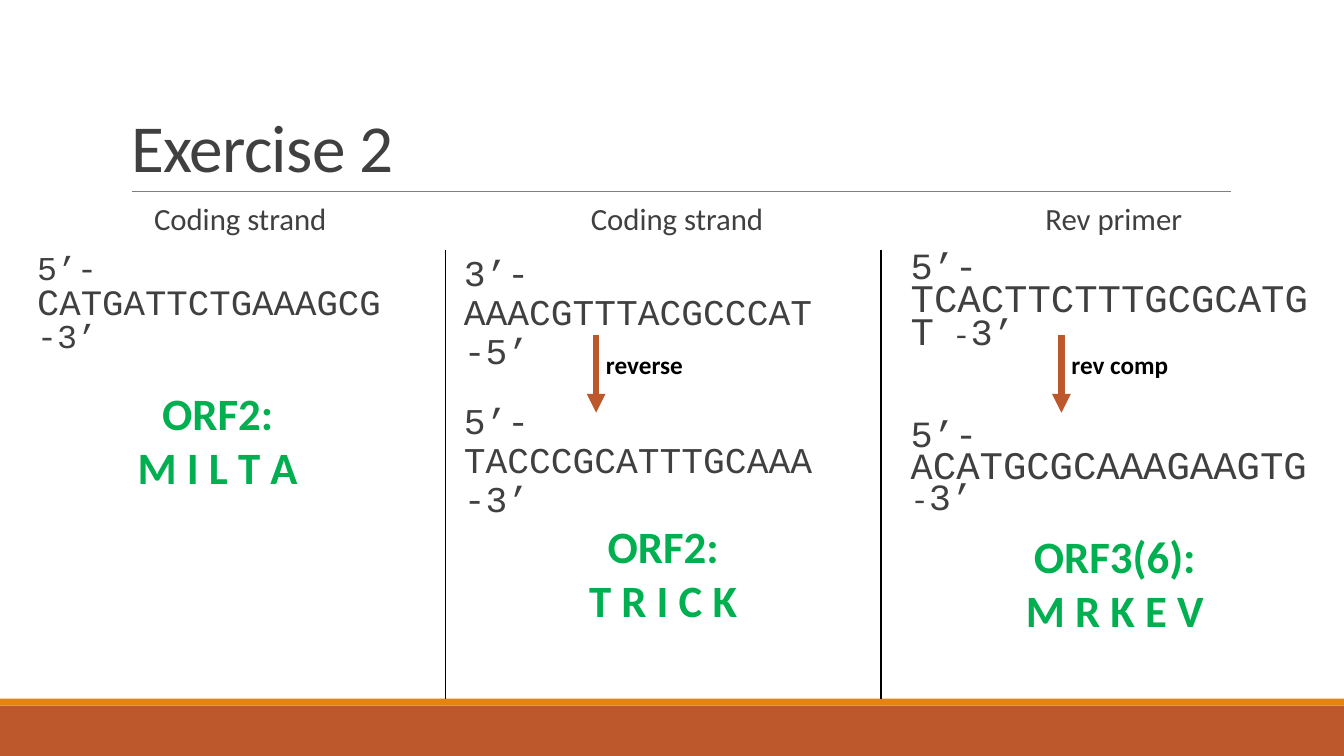
from pptx import Presentation
from pptx.dml.color import RGBColor
from pptx.enum import shapes, text
from pptx.oxml import parse_xml
from pptx.oxml.ns import nsdecls
from pptx.util import Pt

RUST = RGBColor(0xBD, 0x58, 0x2C)
ORANGE = RGBColor(0xE4, 0x83, 0x12)
GREY = RGBColor(0x80, 0x80, 0x80)
DARK = RGBColor(0x40, 0x40, 0x40)
BLACK = RGBColor(0, 0, 0)
GREEN = RGBColor(0, 0xB0, 0x50)
LEFT, PITCH, COL_W = 12.24, 312, 311.5


def add_line(x1, y1, x2, y2, color, width, arrow=False):
    c = s.shapes.add_connector(shapes.MSO_CONNECTOR.STRAIGHT, Pt(x1), Pt(y1), Pt(x2), Pt(y2))
    c.line.color.rgb = color
    c.line.width = Pt(width)
    if arrow:
        c.line._get_or_add_ln().append(parse_xml(f'<a:tailEnd {nsdecls("a")} type="triangle"/>'))
    c._element.spPr.append(parse_xml(f'<a:effectLst {nsdecls("a")}/>'))


def add_text(x, y, w, h, paragraphs, font, color, bold=False, align=text.PP_ALIGN.LEFT,
             spacing=1.0, indent=0, wrap=True):
    tf = s.shapes.add_textbox(Pt(x), Pt(y), Pt(w), Pt(h)).text_frame
    tf.word_wrap = wrap
    for i, runs in enumerate(paragraphs):
        p = tf.add_paragraph() if i else tf.paragraphs[0]
        p.alignment = align
        p.line_spacing = spacing
        if indent:
            p._p.get_or_add_pPr().set("marL", str(Pt(indent)))
        for words, size in runs:
            for j, part in enumerate(words.split("\v")):
                if j:
                    p.add_line_break()
                r = p.add_run()
                r.text = part
                r.font.name = font
                r.font.size = Pt(size)
                r.font.bold = bold
                r.font.color.rgb = color
    return tf


prs = Presentation()
prs.slide_width, prs.slide_height = Pt(960), Pt(540)
s = prs.slides.add_slide(prs.slide_layouts[5])

for top, height, color in [(504, 36, RUST), (499, 5, ORANGE)]:
    sp = s.shapes.add_shape(shapes.MSO_SHAPE.RECTANGLE, 0, Pt(top), prs.slide_width, Pt(height))
    sp.shadow.inherit = False
    sp.fill.solid()
    sp.fill.fore_color.rgb = color
    sp.line.fill.background()
add_line(94.3, 136.8, 879.1, 136.8, GREY, 0.5)

title = s.shapes.title
title.left, title.top, title.width, title.height = Pt(86.4), Pt(22.3), Pt(792), Pt(114.5)
tf = title.text_frame
tf.text = "Exercise 2"
tf.auto_size = text.MSO_AUTO_SIZE.NONE
tf.vertical_anchor = text.MSO_ANCHOR.BOTTOM
p = tf.paragraphs[0]
p.alignment = text.PP_ALIGN.LEFT
p.line_spacing = 0.85
r = p.runs[0]
r.font.name = "Calibri"
r.font.size = Pt(48)
r.font.color.rgb = DARK
r._r.get_or_add_rPr().set("spc", "-50")

for i, heading in enumerate(["Coding strand", "Coding strand", "Rev primer"]):
    tf = add_text(LEFT + i * PITCH, 141.8, COL_W, 29.5, [[(heading, 22)]], "Calibri", DARK,
                  align=text.PP_ALIGN.CENTER, spacing=0.9, indent=7.2)
    tf.margin_left = tf.margin_right = 0

sequences = [
    (0, 178.6, 73.4, 0.8, 7.2,
     [("5’-  ", 23.8), ("C", 26.4), ("ATGATTCTGAAAGCG ", 25.5), ("-3’", 23.8)]),
    (1, 178.6, 73.4, 0.9, 0, [("3’- \vAAACGTTTACGCCCAT", 25.9), (" ", 24.1), ("-5’", 25.9)]),
    (1, 284.4, 73.4, 0.9, 0, [("5’- \vTACCCGCATTTGCAAA", 25.9), (" ", 24.1), ("-3’", 25.9)]),
    (2, 178.6, 80.6, 0.7, 7.2,
     [("5’-  ", 26.4), ("TCACTTCTTTGCGCATGT", 27.9), (" -", 21.7), ("3’", 26.4)]),
    (2, 298.1, 80.6, 0.7, 7.2,
     [("5’-  A", 26.4), ("CATGCGCAAAGAAGTG", 27.9), (" -", 21.7), ("3’", 26.4)]),
]
for col, top, height, spacing, indent, runs in sequences:
    add_text(LEFT + col * PITCH, top, COL_W, height, [runs], "Courier New", DARK,
             spacing=spacing, indent=indent)

for x, step, width in [(425.8, "reverse", 69.8), (758.2, "rev comp", 84.2)]:
    add_line(x, 239.4, x, 294.8, RUST, 4.5, arrow=True)
    add_text(x, 246, width, 28.8, [[(step, 18)]], "Calibri", BLACK, bold=True, wrap=False)

for x in (318.2, 629.2):
    add_line(x, 178.6, x, 499.3, BLACK, 1)

answers = [(46.1, 272.2, "ORF2:", "M I L T A"),
           (364.3, 367.2, "ORF2:", "T R I C K"),
           (686.9, 374.4, "ORF3(6):", "M R K E V")]
for x, y, frame, peptide in answers:
    add_text(x, y, 218.9, 85, [[(frame, 32)], [(peptide, 32)]], "Calibri", GREEN,
             bold=True, align=text.PP_ALIGN.CENTER)

prs.save("out.pptx")
